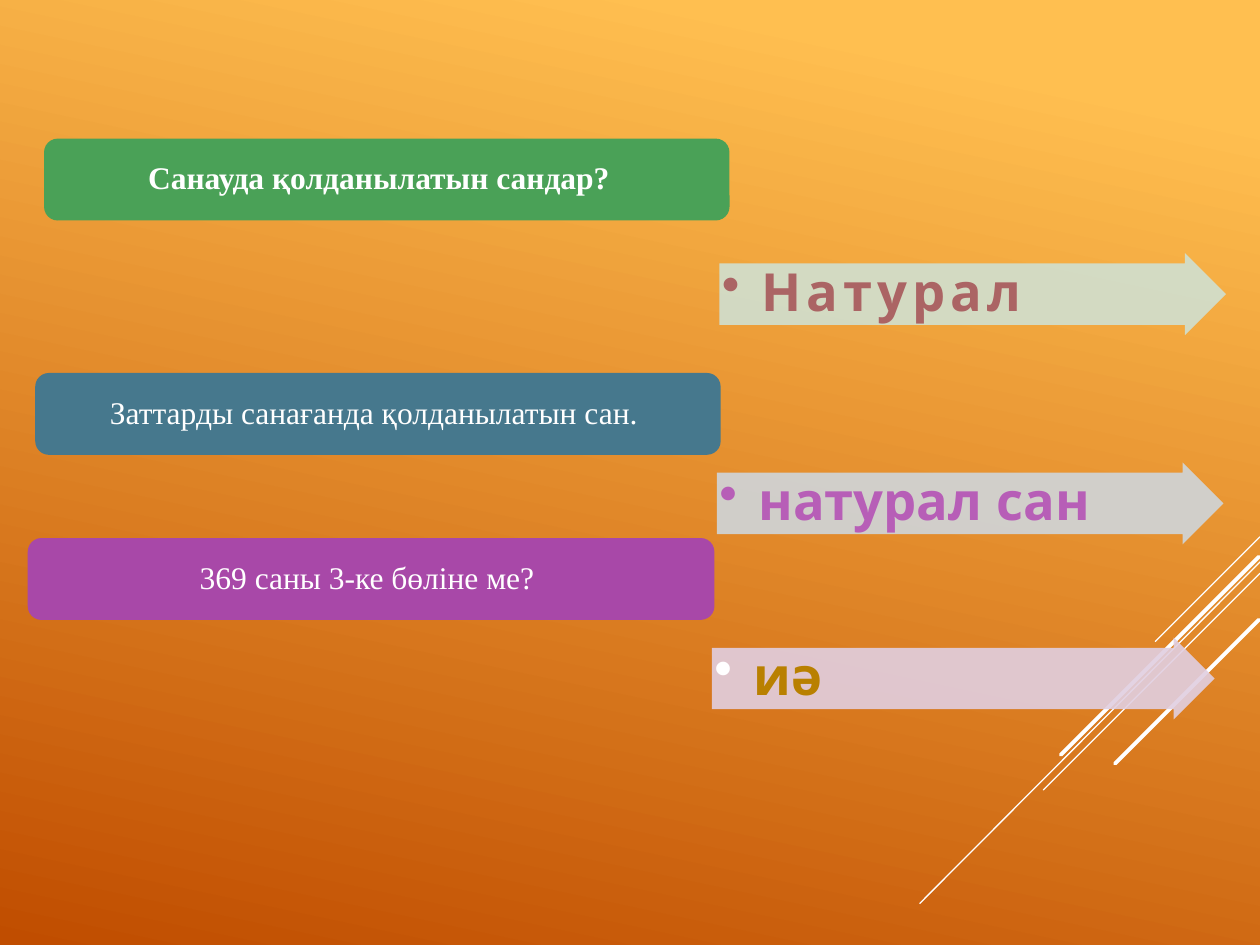
from lxml.etree import SubElement
from pptx import Presentation
from pptx.dml.color import RGBColor
from pptx.enum.shapes import MSO_CONNECTOR, MSO_SHAPE
from pptx.enum.text import MSO_ANCHOR, PP_ALIGN
from pptx.oxml import parse_xml
from pptx.oxml.ns import nsdecls, qn
from pptx.util import Inches, Pt

COLORS = {
    "sun": "FFBF50", "ember": "C04D00", "white": "FFFFFF",
    "green": "4AA157", "blue": "46788D", "purple": "A848A8",
    "pale green": "D0E0D1", "pale blue": "CFD6DB", "pale purple": "E1CFE1",
    "rose": "AB6464", "orchid": "B75EB7", "gold": "B98000",
}


class QuizSlide:
    question_font = "Times New Roman"
    answer_font = "League Spartan"
    bar_height = 0.65

    def __init__(self, deck):
        self.page = deck.slides.add_slide(deck.slide_layouts[6])

    def color(self, name):
        return RGBColor.from_string(COLORS[name])

    def background(self, first, last, angle):
        fill = self.page.background.fill
        fill.gradient()
        fill.gradient_angle = angle
        for stop, (position, name) in zip(fill.gradient_stops, (first, last)):
            stop.position = position
            stop.color.rgb = self.color(name)

    def stripe(self, start, end, weight):
        points = [Inches(value) for value in (*start, *end)]
        line = self.page.shapes.add_connector(MSO_CONNECTOR.STRAIGHT, *points)
        line.line.color.rgb = self.color("white")
        line.line.width = Pt(weight)
        line._element.spPr.find(qn("a:ln")).set("cap", "rnd")
        SubElement(line._element.spPr, qn("a:effectLst"))

    def bar(self, kind, left, top, width, fill, margins):
        box = self.page.shapes.add_shape(
            kind, Inches(left), Inches(top), Inches(width), Inches(self.bar_height))
        box.shadow.inherit = False
        box.fill.solid()
        box.fill.fore_color.rgb = self.color(fill)
        box.line.fill.background()
        frame = box.text_frame
        frame.word_wrap = True
        frame.margin_left = frame.margin_right = Inches(margins[0])
        frame.margin_top = frame.margin_bottom = Inches(margins[1])
        frame.paragraphs[0].line_spacing = 0.9
        return box

    def add_span(self, paragraph, text, font, size, color, bold):
        span = paragraph.add_run()
        span.text = text
        span.font.name = font
        span.font.size = Pt(size)
        span.font.bold = bold
        span.font.color.rgb = self.color(color)
        return span

    def question(self, left, top, width, fill, text, bold=False):
        box = self.bar(MSO_SHAPE.ROUNDED_RECTANGLE, left, top, width, fill, (0.07, 0.04))
        box.text_frame.vertical_anchor = MSO_ANCHOR.MIDDLE
        paragraph = box.text_frame.paragraphs[0]
        paragraph.alignment = PP_ALIGN.CENTER
        self.add_span(paragraph, text, self.question_font, 18, "white", bold)

    def answer(self, left, top, width, fill, text, color, bullet, raised=False):
        box = self.bar(MSO_SHAPE.RIGHT_ARROW, left, top, width, fill, (0.02, 0.02))
        box.adjustments[0] = 0.75
        box.adjustments[1] = 0.5
        tint = box._element.spPr.find(qn("a:solidFill"))[0]
        SubElement(tint, qn("a:alpha"), val="90000")
        box.text_frame.vertical_anchor = MSO_ANCHOR.TOP
        paragraph = box.text_frame.paragraphs[0]
        paragraph.alignment = PP_ALIGN.LEFT
        paragraph.level = 1
        self.bullet(paragraph, bullet)
        span = self.add_span(paragraph, text, self.answer_font, 30, color, True)
        if raised:
            self.raise_text(span)

    def bullet(self, paragraph, color):
        properties = paragraph._p.get_or_add_pPr()
        properties.set("marL", str(Inches(0.31)))
        properties.set("indent", str(-Inches(0.31)))
        tint = SubElement(properties, qn("a:buClr"))
        SubElement(tint, qn("a:srgbClr"), val=COLORS[color])
        SubElement(properties, qn("a:buChar"), char="•")

    def raise_text(self, span):
        properties = span._r.get_or_add_rPr()
        properties.set("spc", "300")
        properties.find(qn("a:solidFill")).addnext(parse_xml(
            f'<a:effectLst {nsdecls("a")}><a:outerShdw blurRad="25400" dist="25400" '
            'dir="2700000"><a:srgbClr val="000000"><a:alpha val="40000"/>'
            '</a:srgbClr></a:outerShdw></a:effectLst>'))


def main():
    deck = Presentation()
    deck.slide_width, deck.slide_height = Inches(10), Inches(7.5)
    slide = QuizSlide(deck)
    slide.background((0.1, "sun"), (1, "ember"), 258)

    for start, end, weight in (
        ((10, 4.26), (9.17, 5.09), 0.75),
        ((10, 4.46), (7.3, 7.17), 0.75),
        ((10, 4.55), (8.28, 6.27), 0.75),
        ((9.99, 4.42), (8.42, 5.99), 2.25),
        ((9.99, 4.92), (8.85, 6.06), 2.25),
    ):
        slide.stripe(start, end, weight)

    slide.answer(5.71, 2.01, 4.02, "pale green", "Натурал", "rose", "rose", raised=True)
    slide.question(0.35, 1.1, 5.44, "green", "Санауда қолданылатын сандар?  ", bold=True)
    slide.answer(5.69, 3.67, 4.02, "pale blue", "натурал сан", "orchid", "orchid")
    slide.question(0.28, 2.96, 5.44, "blue", "Заттарды санағанда қолданылатын сан. ")
    slide.answer(5.65, 5.06, 3.99, "pale purple", "иә", "gold", "white")
    slide.question(0.22, 4.27, 5.45, "purple", "369 саны 3-ке бөліне ме? ")

    deck.save("out.pptx")


if __name__ == "__main__":
    main()
